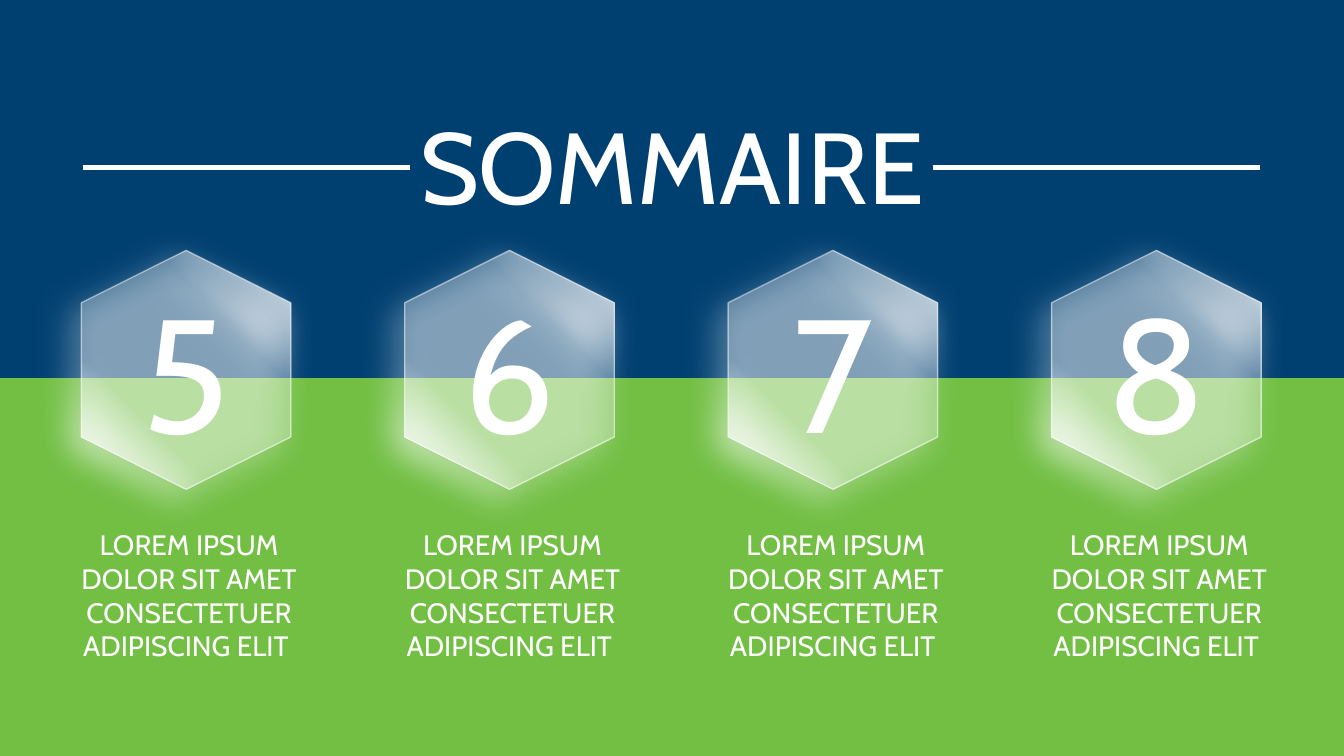
from dataclasses import dataclass

from lxml import etree
from pptx import Presentation
from pptx.dml.color import RGBColor
from pptx.enum.shapes import MSO_CONNECTOR, MSO_SHAPE
from pptx.enum.text import MSO_ANCHOR, MSO_AUTO_SIZE, PP_ALIGN
from pptx.oxml import parse_xml
from pptx.oxml.ns import nsdecls, qn
from pptx.util import Cm, Pt

RECTANGLE = MSO_SHAPE.RECTANGLE
HEXAGON = MSO_SHAPE.HEXAGON
STRAIGHT = MSO_CONNECTOR.STRAIGHT
TOP = MSO_ANCHOR.TOP
GROW = MSO_AUTO_SIZE.SHAPE_TO_FIT_TEXT
CENTER = PP_ALIGN.CENTER

BLUE = RGBColor(0x00, 0x40, 0x71)
GREEN = RGBColor(0x72, 0xBF, 0x44)
WHITE = RGBColor(0xFF, 0xFF, 0xFF)
FONT = "Cabin"

SLIDE_WIDTH = 33.87
SLIDE_HEIGHT = 19.05
COLUMN_PITCH = 8.15
RULE_TOP = 4.22
CAPTION = "LOREM IPSUM\vDOLOR SIT AMET CONSECTETUER ADIPISCING ELIT "
GLASS_STOPS = ((0, 100), (30, 30), (70, 30), (100, 100))


@dataclass(frozen=True)
class Box:
    left: float
    top: float
    width: float
    height: float

    def shifted(self, distance: float) -> "Box":
        return Box(self.left + distance, self.top, self.width, self.height)

    def lengths(self) -> tuple:
        return Cm(self.left), Cm(self.top), Cm(self.width), Cm(self.height)


@dataclass(frozen=True)
class Band:
    box: Box
    color: RGBColor


@dataclass(frozen=True)
class Rule:
    start: float
    end: float


BANDS = (
    Band(Box(0, 0, SLIDE_WIDTH, 11.63), BLUE),
    Band(Box(0, SLIDE_HEIGHT / 2, SLIDE_WIDTH, SLIDE_HEIGHT / 2), GREEN),
)
RULES = (Rule(23.5, 31.75), Rule(2.08, 10.34))
TITLE_BOX = Box(0, 2.49, SLIDE_WIDTH, 3.33)
CAPTION_BOX = Box(0.84, 13.18, 7.85, 3.68)
HEXAGON_BOX = Box(1.68, 6.68, 6.02, 5.28)
NUMBER_BOX = Box(1.7, 6.73, 5.99, 5.18)
NUMBERS = ("5", "6", "7", "8")


def write_text(shape, text: str, size: float) -> None:
    text_frame = shape.text_frame
    text_frame.text = text
    text_frame.word_wrap = True
    text_frame.auto_size = GROW
    text_frame.vertical_anchor = TOP
    paragraph = text_frame.paragraphs[0]
    paragraph.alignment = CENTER
    for run in paragraph.runs:
        run.font.name = FONT
        run.font.size = Pt(size)
        run.font.color.rgb = WHITE


def add_text(shapes, box: Box, text: str, size: float) -> None:
    write_text(shapes.add_textbox(*box.lengths()), text, size)


def add_band(shapes, band: Band) -> None:
    shape = shapes.add_shape(RECTANGLE, *band.box.lengths())
    shape.shadow.inherit = False
    shape.fill.solid()
    shape.fill.fore_color.rgb = band.color
    shape.line.fill.background()


def add_rule(shapes, rule: Rule) -> None:
    connector = shapes.add_connector(
        STRAIGHT, Cm(rule.start), Cm(RULE_TOP), Cm(rule.end), Cm(RULE_TOP)
    )
    connector.line.color.rgb = WHITE
    connector.line.width = Pt(3)
    etree.SubElement(connector.element.spPr, qn("a:effectLst"))


def add_glass_hexagon(shapes, box: Box) -> None:
    shape = shapes.add_shape(HEXAGON, *box.lengths())
    shape.rotation = 90
    shape.line.color.rgb = WHITE
    shape.line.width = Pt(1)
    shape.shadow.inherit = False
    properties = shape.element.spPr
    line_color = properties.find(".//" + qn("a:srgbClr"))
    etree.SubElement(line_color, qn("a:alpha"), val="50000")
    stops = "".join(
        f'<a:gs pos="{position * 1000}"><a:srgbClr val="{WHITE}">'
        f'<a:alpha val="{opacity * 1000}"/></a:srgbClr></a:gs>'
        for position, opacity in GLASS_STOPS
    )
    gradient = parse_xml(
        f'<a:gradFill {nsdecls("a")} rotWithShape="1"><a:gsLst>{stops}</a:gsLst>'
        '<a:lin ang="2700000" scaled="0"/></a:gradFill>'
    )
    properties.find(qn("a:prstGeom")).addnext(gradient)
    glow = parse_xml(
        f'<a:outerShdw {nsdecls("a")} blurRad="{Pt(24)}" dist="{Pt(11)}" '
        f'dir="8100000" algn="ctr" rotWithShape="0"><a:srgbClr val="{WHITE}"/>'
        "</a:outerShdw>"
    )
    properties.find(qn("a:effectLst")).append(glow)


def add_chapter(slide, column: int, number: str) -> None:
    shapes = slide.shapes.add_group_shape().shapes
    distance = column * COLUMN_PITCH
    add_text(shapes, CAPTION_BOX.shifted(distance), CAPTION, 20)
    add_glass_hexagon(shapes, HEXAGON_BOX.shifted(distance))
    add_text(shapes, NUMBER_BOX.shifted(distance), number, 115)


def place_title(slide) -> None:
    title = slide.shapes.title
    title.left, title.top, title.width, title.height = TITLE_BOX.lengths()
    write_text(title, "SOMMAIRE", 72)
    title.element.getparent().append(title.element)


def main() -> None:
    presentation = Presentation()
    presentation.slide_width = Cm(SLIDE_WIDTH)
    presentation.slide_height = Cm(SLIDE_HEIGHT)
    title_only = presentation.slide_layouts.get_by_name("Title Only")
    slide = presentation.slides.add_slide(title_only)
    for band in BANDS:
        add_band(slide.shapes, band)
    for column, number in enumerate(NUMBERS):
        add_chapter(slide, column, number)
    for rule in RULES:
        add_rule(slide.shapes, rule)
    place_title(slide)
    presentation.save("out.pptx")


if __name__ == "__main__":
    main()
